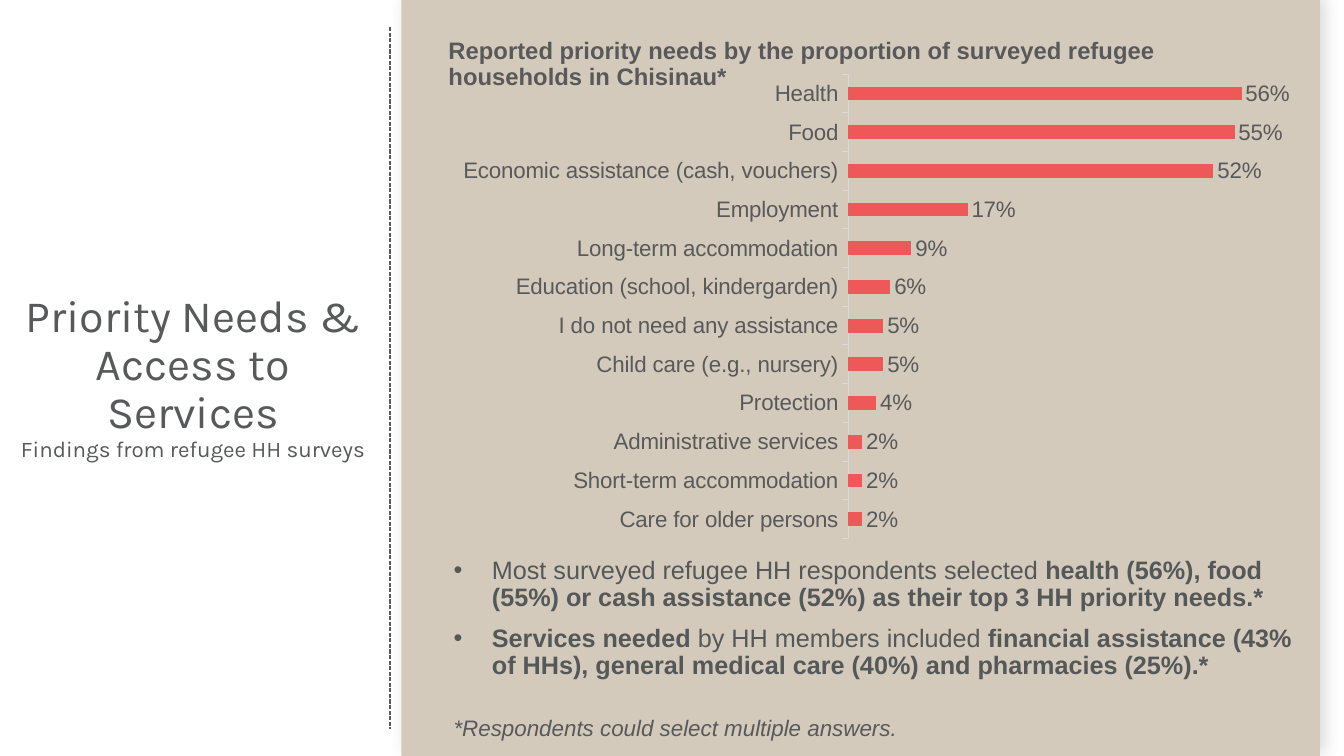
from lxml import etree
from pptx import Presentation
from pptx import util as u
from pptx.chart.data import CategoryChartData
from pptx.dml.color import RGBColor
from pptx.enum import chart as charts, dml, shapes, text
from pptx.oxml import parse_xml
from pptx.oxml.ns import nsdecls, qn

GREY = RGBColor(0x58, 0x59, 0x5A)
SLATE = RGBColor(0x55, 0x58, 0x59)
SAND = RGBColor(0xD4, 0xCA, 0xBB)
CORAL = RGBColor(0xEE, 0x58, 0x59)
PALE = RGBColor(0xD9, 0xD9, 0xD9)

NEEDS = [
    ("Health", 0.56), ("Food", 0.55),
    ("Economic assistance (cash, vouchers)", 0.52), ("Employment", 0.17),
    ("Long-term accommodation", 0.09), ("Education (school, kindergarden)", 0.06),
    ("I do not need any assistance", 0.05), ("Child care (e.g., nursery)", 0.05),
    ("Protection", 0.04), ("Administrative services", 0.02),
    ("Short-term accommodation", 0.02), ("Care for older persons", 0.02),
]
FINDINGS = [
    [("Most surveyed refugee HH respondents selected ", {}),
     ("health (56%), food (55%) or cash assistance (52%) as their top 3 HH "
      "priority needs.*", {"bold": True})],
    [("Services needed ", {"bold": True}), ("by HH members included ", {}),
     ("financial assistance (43% of HHs), general medical care (40%) and "
      "pharmacies (25%).*", {"bold": True})],
]


def style_font(font, color, **values):
    font.color.rgb = color
    for key, value in values.items():
        setattr(font, key, value)


class SlideBuilder:
    """Places elements by percentages of the slide's width and height."""

    def __init__(self, deck):
        self.deck = deck
        self.slide = deck.slides.add_slide(deck.slide_layouts[6])
        self.font = "Arial"
        self.indent = u.Inches(0.38)

    def area(self, left, top, width, height):
        across, down = self.deck.slide_width / 100, self.deck.slide_height / 100
        return [u.Emu(round(n)) for n in
                (left * across, top * down, width * across, height * down)]

    def panel(self, place, fill):
        panel = self.slide.shapes.add_shape(
            shapes.MSO_SHAPE.RECTANGLE, *self.area(*place))
        panel.fill.solid()
        panel.fill.fore_color.rgb = fill
        panel.line.fill.background()
        panel.shadow.inherit = False
        effects = panel._element.spPr.find(qn("a:effectLst"))
        effects.append(parse_xml(
            f'<a:outerShdw {nsdecls("a")} blurRad="{u.Pt(12)}" dist="{u.Pt(4)}" '
            f'dir="{324 * 60000}" algn="ctr" rotWithShape="0">'
            '<a:srgbClr val="000000"><a:alpha val="14000"/></a:srgbClr>'
            '</a:outerShdw>'))

    def divider(self, column, top, bottom):
        x, start, _, end = self.area(column, top, 0, bottom)
        divider = self.slide.shapes.add_connector(
            shapes.MSO_CONNECTOR.STRAIGHT, x, start, x, end)
        divider.line.color.rgb = GREY
        divider.line.width = u.Pt(1)
        divider.line.dash_style = dml.MSO_LINE.SQUARE_DOT
        etree.SubElement(divider._element.spPr, qn("a:effectLst"))

    def words(self, place, paragraphs, size, color=GREY, font=None,
              anchor=text.MSO_ANCHOR.TOP, align=text.PP_ALIGN.LEFT,
              before=10, bullets=False):
        """Adds text; each paragraph is a list of (wording, font values)."""
        frame = self.slide.shapes.add_textbox(*self.area(*place)).text_frame
        frame.word_wrap = True
        frame.vertical_anchor = anchor
        for number, runs in enumerate(paragraphs):
            paragraph = frame.add_paragraph() if number else frame.paragraphs[0]
            layout = {"alignment": align, "line_spacing": 0.9,
                      "space_before": u.Pt(before)}
            for key, value in layout.items():
                setattr(paragraph, key, value)
            if bullets:
                self.bullet(paragraph)
            for position, (wording, values) in enumerate(runs):
                if position and values.get("size"):
                    paragraph.add_line_break()
                run = paragraph.add_run()
                run.text = wording
                style_font(run.font, color, **{
                    "name": font or self.font, "size": u.Pt(size), **values})

    def bullet(self, paragraph):
        properties = paragraph._p.get_or_add_pPr()
        properties.set("marL", str(self.indent))
        properties.set("indent", str(-self.indent))
        etree.SubElement(properties, qn("a:buFont")).set("typeface", self.font)
        etree.SubElement(properties, qn("a:buChar")).set("char", "•")

    def bars(self, place, rows, plot_area):
        data = CategoryChartData(number_format="0%")
        data.categories = [need for need, _ in reversed(rows)]
        data.add_series("Series 1", [share for _, share in reversed(rows)])
        chart = self.slide.shapes.add_chart(
            charts.XL_CHART_TYPE.BAR_CLUSTERED, *self.area(*place), data).chart
        chart.has_legend = chart.has_title = False
        style_font(chart.font, GREY, name=self.font, size=u.Pt(16))

        needs, shares = chart.category_axis, chart.value_axis
        needs.major_tick_mark = charts.XL_TICK_MARK.OUTSIDE
        needs.format.line.color.rgb = PALE
        needs.format.line.width = u.Pt(0.75)
        scale = {"visible": False, "has_major_gridlines": False,
                 "minimum_scale": 0, "maximum_scale": 0.6}
        for key, value in scale.items():
            setattr(shares, key, value)

        plot = chart.plots[0]
        plot.gap_width = 182
        plot.vary_by_categories = False
        plot.series[0].format.fill.solid()
        plot.series[0].format.fill.fore_color.rgb = CORAL
        plot.has_data_labels = True
        labels = {"show_value": True, "number_format": "0%",
                  "number_format_is_linked": False,
                  "position": charts.XL_LABEL_POSITION.OUTSIDE_END}
        for key, value in labels.items():
            setattr(plot.data_labels, key, value)
        style_font(plot.data_labels.font, GREY, name=self.font, size=u.Pt(16))
        self.fix_plot(chart, plot_area)

    def fix_plot(self, chart, plot_area):
        """Sets the inner plot area as shares of the chart."""
        area = chart._chartSpace.chart.plotArea
        for old in area.findall(qn("c:layout")):
            area.remove(old)
        layout = etree.Element(qn("c:layout"))
        manual = etree.SubElement(layout, qn("c:manualLayout"))
        values = {"layoutTarget": "inner", "xMode": "edge", "yMode": "edge",
                  **dict(zip("xywh", plot_area))}
        for key, value in values.items():
            etree.SubElement(manual, qn(f"c:{key}")).set("val", str(value))
        area.insert(0, layout)


def main():
    deck = Presentation()
    deck.slide_width, deck.slide_height = u.Inches(13.33), u.Inches(7.5)
    page = SlideBuilder(deck)
    page.panel((29.86, 0, 68.34, 100), SAND)
    page.divider(29.03, 3.6, 96.4)
    page.words((0, 29.6, 28.73, 40.8),
               [[("Priority Needs & Access to Services", {}),
                 ("Findings from refugee HH surveys", {"size": u.Pt(16)})]],
               32, font="Karla", anchor=text.MSO_ANCHOR.MIDDLE,
               align=text.PP_ALIGN.CENTER, before=0)
    page.words((32.63, 3.33, 64.07, 10.4),
               [[("Reported priority needs by the proportion of surveyed "
                  "refugee households in Chisinau*", {"bold": True})]],
               17, anchor=text.MSO_ANCHOR.MIDDLE)
    page.words((33.01, 73.07, 64.07, 18.4), FINDINGS, 18, SLATE, bullets=True)
    page.words((33.01, 94.27, 52.89, 5.73),
               [[("*Respondents could select multiple answers.",
                  {"italic": True})]], 16)
    page.bars((33.01, 8.53, 62.94, 64), NEEDS, (0.48, 0.02, 0.5, 0.96))
    deck.save("out.pptx")


if __name__ == "__main__":
    main()
